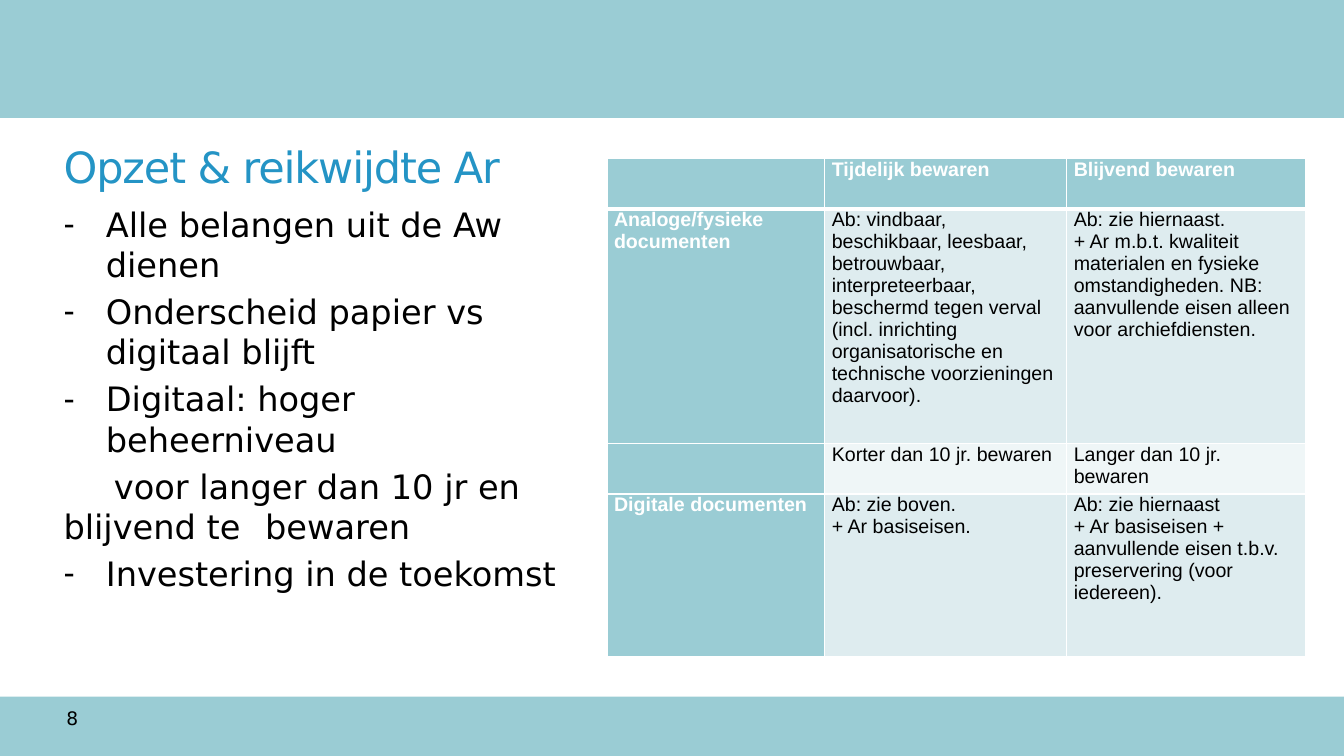
"""Build the slide about the scope of the Ar, with a list and a table."""
from dataclasses import dataclass

from lxml import etree
from pptx import Presentation
from pptx.dml.color import RGBColor
from pptx.enum.shapes import MSO_SHAPE
from pptx.enum.text import MSO_ANCHOR, MSO_AUTO_SIZE, PP_ALIGN
from pptx.oxml.ns import qn
from pptx.util import Inches, Pt

RECT = MSO_SHAPE.RECTANGLE
TOP, MIDDLE = MSO_ANCHOR.TOP, MSO_ANCHOR.MIDDLE
NO_FIT = MSO_AUTO_SIZE.NONE
LEFT = PP_ALIGN.LEFT

TITLE = "Opzet & reikwijdte Ar"
PAGE = "8"
POINTS = [
    ("-", "Alle belangen uit de Aw dienen"),
    ("-", "Onderscheid papier vs digitaal blijft"),
    ("-", "Digitaal: hoger beheerniveau"),
    (None, "\tvoor langer dan 10 jr en blijvend te \tbewaren"),
    ("-", "Investering in de toekomst"),
]
ROWS = [
    ["", "Tijdelijk bewaren", "Blijvend bewaren"],
    ["Analoge/fysieke documenten",
     "Ab: vindbaar, beschikbaar, leesbaar, betrouwbaar, interpreteerbaar, "
     "beschermd tegen verval (incl. inrichting organisatorische en "
     "technische voorzieningen daarvoor).",
     "Ab: zie hiernaast.\n+ Ar m.b.t. kwaliteit materialen en fysieke "
     "omstandigheden. NB: aanvullende eisen alleen voor archiefdiensten."],
    ["", "Korter dan 10 jr. bewaren", "Langer dan 10 jr. bewaren"],
    ["Digitale documenten",
     "Ab: zie boven.\n+ Ar basiseisen.",
     "Ab: zie hiernaast\n+ Ar basiseisen + aanvullende eisen t.b.v. "
     "preservering (voor iedereen)."],
]
COL_WIDTHS = [2.16, 2.4, 2.37]
ROW_HEIGHTS = [0.5, 2.33, 0.5, 1.61]
BANDS = [(0, 1.17), (6.91, 0.59)]
INDENT = 0.42
TAB_STOPS = [0.47, 1.86]


@dataclass(frozen=True)
class Theme:
    """Colours, fonts and type sizes."""
    band: str = "9ACCD4"
    title: str = "2494C5"
    text: str = "000000"
    white: str = "FFFFFF"
    stripes: tuple = ("EFF6F7", "DEECEF")
    font: str = "DejaVu Sans"
    table_font: str = "Arial"
    title_size: float = 30.7
    body_size: float = 24
    table_size: float = 14
    page_size: float = 13.3


THEME = Theme()


def add_text(p, text, size, color=THEME.text, font=THEME.font, bold=False, spacing=None):
    """Add one formatted run to a paragraph."""
    p.alignment = LEFT
    r = p.add_run()
    r.text = text
    r.font.size = Pt(size)
    r.font.name = font
    r.font.bold = bold
    r.font.color.rgb = RGBColor.from_string(color)
    if spacing is not None:
        r.font._element.set("spc", str(int(spacing * 100)))


def place(sp, left, top, width, height, anchor=TOP):
    """Move a text shape and return its text frame."""
    sp.left, sp.top = Inches(left), Inches(top)
    sp.width, sp.height = Inches(width), Inches(height)
    tf = sp.text_frame
    tf.word_wrap = True
    tf.auto_size = NO_FIT
    tf.vertical_anchor = anchor
    return tf


def set_bullet(p, bullet):
    """Give a paragraph a hanging bullet, or tab stops when it has none."""
    indent = Inches(INDENT) if bullet else 0
    pPr = p._p.get_or_add_pPr()
    pPr.set("marL", str(indent))
    pPr.set("indent", str(-indent))
    if bullet:
        etree.SubElement(pPr, qn("a:buChar"), char=bullet)
        return
    etree.SubElement(pPr, qn("a:buNone"))
    tabs = etree.SubElement(pPr, qn("a:tabLst"))
    for stop in TAB_STOPS:
        etree.SubElement(tabs, qn("a:tab"), pos=str(Inches(stop)), algn="l")


def set_borders(cell, top, bottom):
    """Draw white borders around a cell, before its fill in the XML."""
    tcPr = cell._tc.get_or_add_tcPr()
    for i, (side, width) in enumerate(zip("LRTB", (1, 1, top, bottom))):
        ln = etree.Element(qn("a:ln" + side), w=str(Pt(width)))
        fill = etree.SubElement(ln, qn("a:solidFill"))
        etree.SubElement(fill, qn("a:srgbClr"), val=THEME.white)
        tcPr.insert(i, ln)


def add_bands(slide, width):
    for top, height in BANDS:
        sp = slide.shapes.add_shape(RECT, 0, Inches(top), width, Inches(height))
        sp.shadow.inherit = False
        sp.fill.solid()
        sp.fill.fore_color.rgb = RGBColor.from_string(THEME.band)
        sp.line.fill.background()


def add_points(tf):
    for i, (bullet, text) in enumerate(POINTS):
        p = tf.add_paragraph() if i else tf.paragraphs[0]
        set_bullet(p, bullet)
        p.space_before = Pt(0.2 * THEME.body_size if i else 0)
        add_text(p, text, THEME.body_size)


def add_table(slide):
    frame = slide.shapes.add_table(
        len(ROWS), len(COL_WIDTHS), Inches(6.02), Inches(1.57),
        Inches(sum(COL_WIDTHS)), Inches(sum(ROW_HEIGHTS)))
    table = frame.table
    for col, width in zip(table.columns, COL_WIDTHS):
        col.width = Inches(width)
    for row, height in zip(table.rows, ROW_HEIGHTS):
        row.height = Inches(height)
    for i, texts in enumerate(ROWS):
        for j, text in enumerate(texts):
            cell = table.cell(i, j)
            heading = i == 0 or j == 0
            cell.margin_left = cell.margin_right = Inches(0.07)
            cell.margin_top = cell.margin_bottom = 0
            cell.fill.solid()
            cell.fill.fore_color.rgb = RGBColor.from_string(
                THEME.band if heading else THEME.stripes[i % 2])
            set_borders(cell, 3 if i == 1 else 1, 3 if i == 0 else 1)
            if not text:
                continue
            tf = cell.text_frame
            for n, line in enumerate(text.split("\n")):
                p = tf.add_paragraph() if n else tf.paragraphs[0]
                add_text(p, line, THEME.table_size, font=THEME.table_font, bold=heading,
                         color=THEME.white if heading else THEME.text)


def main():
    prs = Presentation()
    prs.slide_width, prs.slide_height = Inches(13.33), Inches(7.5)
    slide = prs.slides.add_slide(prs.slide_layouts[1])
    add_bands(slide, prs.slide_width)
    tf = place(slide.shapes.title, 0.53, 1.34, 11.91, 0.62, MIDDLE)
    add_text(tf.paragraphs[0], TITLE, THEME.title_size, THEME.title, spacing=-0.8)
    add_points(place(slide.placeholders[1], 0.53, 1.97, 5.31, 4.76))
    page = slide.shapes.add_textbox(0, 0, 0, 0)
    tf = place(page, 0.56, 6.96, 1.04, 0.4)
    add_text(tf.paragraphs[0], PAGE, THEME.page_size)
    add_table(slide)
    prs.save("out.pptx")


if __name__ == "__main__":
    main()
